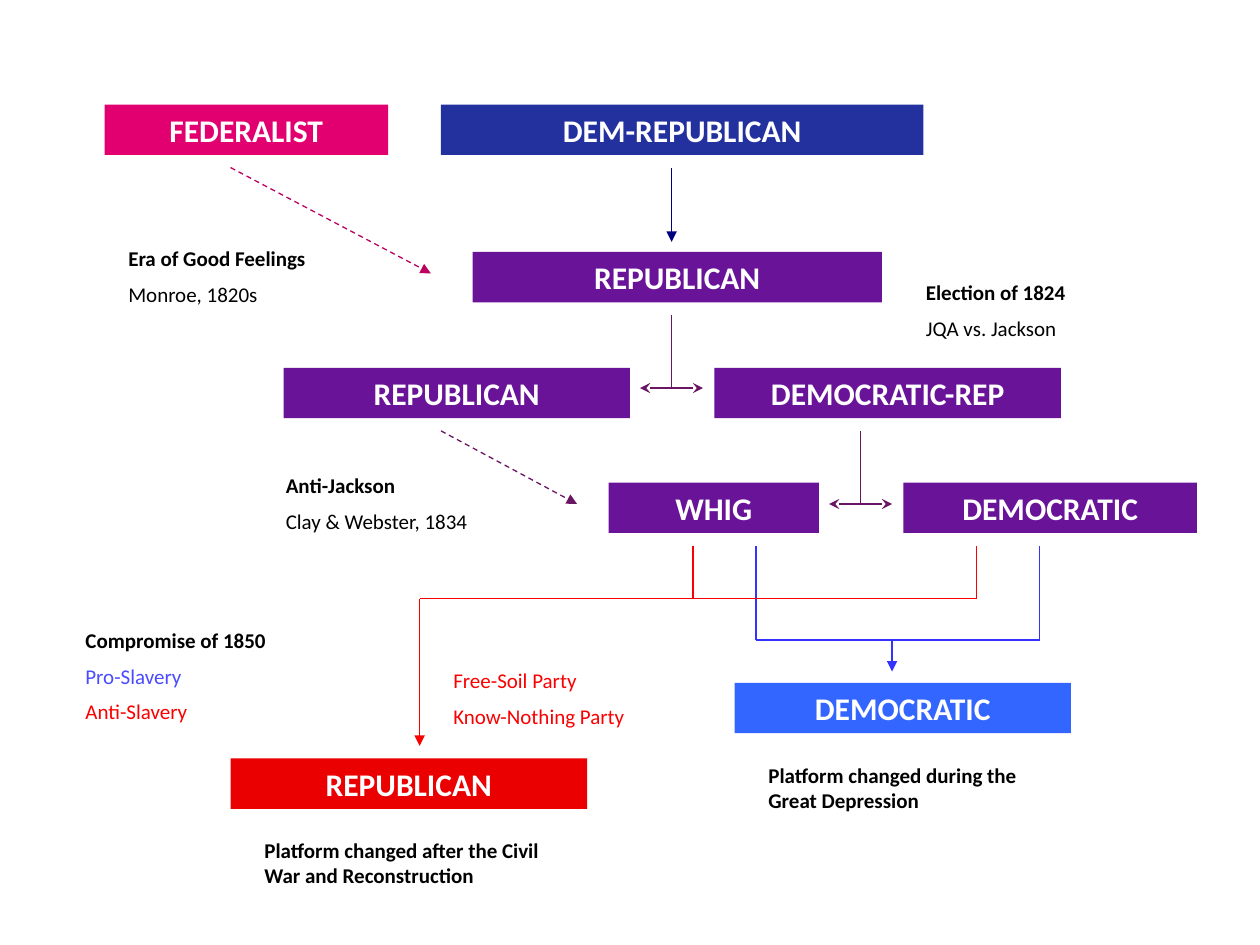
import pptx
import pptx.util
import pptx.dml.color
import pptx.enum.dml
import pptx.enum.shapes
import pptx.enum.text
import pptx.oxml.ns
import lxml.etree

Inches = pptx.util.Inches
Pt = pptx.util.Pt

COLORS = {
    "white": "FFFFFF", "black": "000000", "pink": "E20071", "rose": "BC005E",
    "indigo": "22319E", "navy": "000080", "purple": "691399", "plum": "6A1464",
    "crimson": "EA0000", "red": "FA0000", "azure": "3366FF", "blue": "3333FF",
    "periwinkle": "4B4BFF",
}
FONT = "Calibri"
PARTY_HEIGHT = 0.4
LINE_HEIGHT, NOTE_PADDING = 0.2, 0.1

PARTIES = [
    ("FEDERALIST", 0.83, 0.83, 2.25, "pink"),
    ("DEM-REPUBLICAN", 3.5, 0.83, 3.83, "indigo"),
    ("REPUBLICAN", 3.75, 2, 3.25, "purple"),
    ("REPUBLICAN", 2.25, 2.92, 2.75, "purple"),
    ("DEMOCRATIC-REP", 5.67, 2.92, 2.75, "purple"),
    ("WHIG", 4.83, 3.83, 1.67, "purple"),
    ("DEMOCRATIC", 7.17, 3.83, 2.33, "purple"),
    ("REPUBLICAN", 1.83, 6.02, 2.83, "crimson"),
    ("DEMOCRATIC", 5.83, 5.42, 2.67, "azure"),
]

SUCCESSIONS = [
    ((5.33, 1.33), (5.33, 1.92), "navy", False),
    ((1.83, 1.33), (3.42, 2.17), "rose", True),
    ((3.5, 3.42), (4.58, 4), "plum", True),
    ((3.33, 4.75), (3.33, 5.92), "red", False),
    ((7.08, 5.08), (7.08, 5.33), "blue", False),
]
SPLITS = [(5.33, 2.5, 3.08), (6.83, 3.42, 4)]
SPLIT_REACH = 0.25
BRANCH_TOP = 4.33
BRANCHES = [("blue", 5.08, (6, 8.25), [(6, 8.25)]),
            ("red", 4.75, (5.5, 7.75), [(5.5, 3.33), (7.75, 5.25)])]

NOTES = [
    (0.92, 1.9, 2.17, [("Era of Good Feelings", "black", True),
                       ("Monroe, 1820s", "black", False)]),
    (7.25, 2.17, 2.17, [("Election of 1824", "black", True),
                        ("JQA vs. Jackson", "black", False)]),
    (0.58, 4.93, 2.17, [("Compromise of 1850", "black", True),
                        ("Pro-Slavery", "periwinkle", False),
                        ("Anti-Slavery", "red", False)]),
    (2.17, 3.7, 2.17, [("Anti-Jackson", "black", True),
                       ("Clay & Webster, 1834", "black", False)]),
    (3.5, 5.25, 2.17, [("Free-Soil Party", "red", False),
                       ("Know-Nothing Party", "red", False)]),
    (2, 6.6, 2.58, [("Platform changed after the Civil War and Reconstruction", "black", True)]),
    (6, 6, 2.58, [("Platform changed during the Great Depression", "black", True)]),
]


def rgb(name):
    return pptx.dml.color.RGBColor.from_string(COLORS[name])


def style_text(para, size, color, bold):
    for span in para.runs:
        span.font.name = FONT
        span.font.size = Pt(size)
        span.font.bold = bold
        span.font.color.rgb = rgb(color)


def add_party(page, name, left, top, width, color):
    box = page.shapes.add_shape(
        pptx.enum.shapes.MSO_SHAPE.RECTANGLE,
        Inches(left), Inches(top), Inches(width), Inches(PARTY_HEIGHT))
    box.shadow.inherit = False
    box.fill.solid()
    box.fill.fore_color.rgb = rgb(color)
    box.line.fill.background()
    frame = box.text_frame
    frame.text = name
    frame.word_wrap = True
    frame.vertical_anchor = pptx.enum.text.MSO_ANCHOR.MIDDLE
    para = frame.paragraphs[0]
    para.alignment = pptx.enum.text.PP_ALIGN.CENTER
    style_text(para, 18, color="white", bold=True)


def add_line(page, start, end, color, dashed=False, head=None, tail=None):
    line = page.shapes.add_connector(
        pptx.enum.shapes.MSO_CONNECTOR.STRAIGHT,
        *[Inches(value) for value in (*start, *end)])
    line.line.color.rgb = rgb(color)
    line.line.width = Pt(0.75)
    if dashed:
        line.line.dash_style = pptx.enum.dml.MSO_LINE.DASH
    qn = pptx.oxml.ns.qn
    outline = line.line._get_or_add_ln()
    for tag, kind in (("a:headEnd", head), ("a:tailEnd", tail)):
        if kind:
            lxml.etree.SubElement(outline, qn(tag), type=kind)
    lxml.etree.SubElement(line._element.spPr, qn("a:effectLst"))


def add_note(page, left, top, width, lines):
    height = LINE_HEIGHT * len(lines) + NOTE_PADDING * (len(lines) + 1)
    if len(lines) == 1:
        height = 2 * LINE_HEIGHT + NOTE_PADDING
    box = page.shapes.add_textbox(Inches(left), Inches(top), Inches(width), Inches(height))
    frame = box.text_frame
    frame.word_wrap = True
    frame.text = "\n".join(text for text, _, _ in lines)
    for index, (para, (_, color, bold)) in enumerate(zip(frame.paragraphs, lines)):
        para.space_before = Pt(6 if index else 0)
        style_text(para, 12, color, bold)


def main():
    deck = pptx.Presentation()
    deck.slide_width, deck.slide_height = Inches(10), Inches(7.5)
    page = deck.slides.add_slide(deck.slide_layouts[6])

    for party in PARTIES:
        add_party(page, *party)

    for x, top, bottom in SPLITS:
        add_line(page, (x, top), (x, bottom), "plum")
        add_line(page, (x - SPLIT_REACH, bottom), (x + SPLIT_REACH, bottom), "plum",
                 head="stealth", tail="stealth")

    for color, level, stems, bars in BRANCHES:
        for x in stems:
            add_line(page, (x, BRANCH_TOP), (x, level), color)
        for start, end in bars:
            add_line(page, (start, level), (end, level), color)

    for start, end, color, dashed in SUCCESSIONS:
        add_line(page, start, end, color, dashed, tail="triangle")

    for note in NOTES:
        add_note(page, *note)

    deck.save("out.pptx")


if __name__ == "__main__":
    main()
